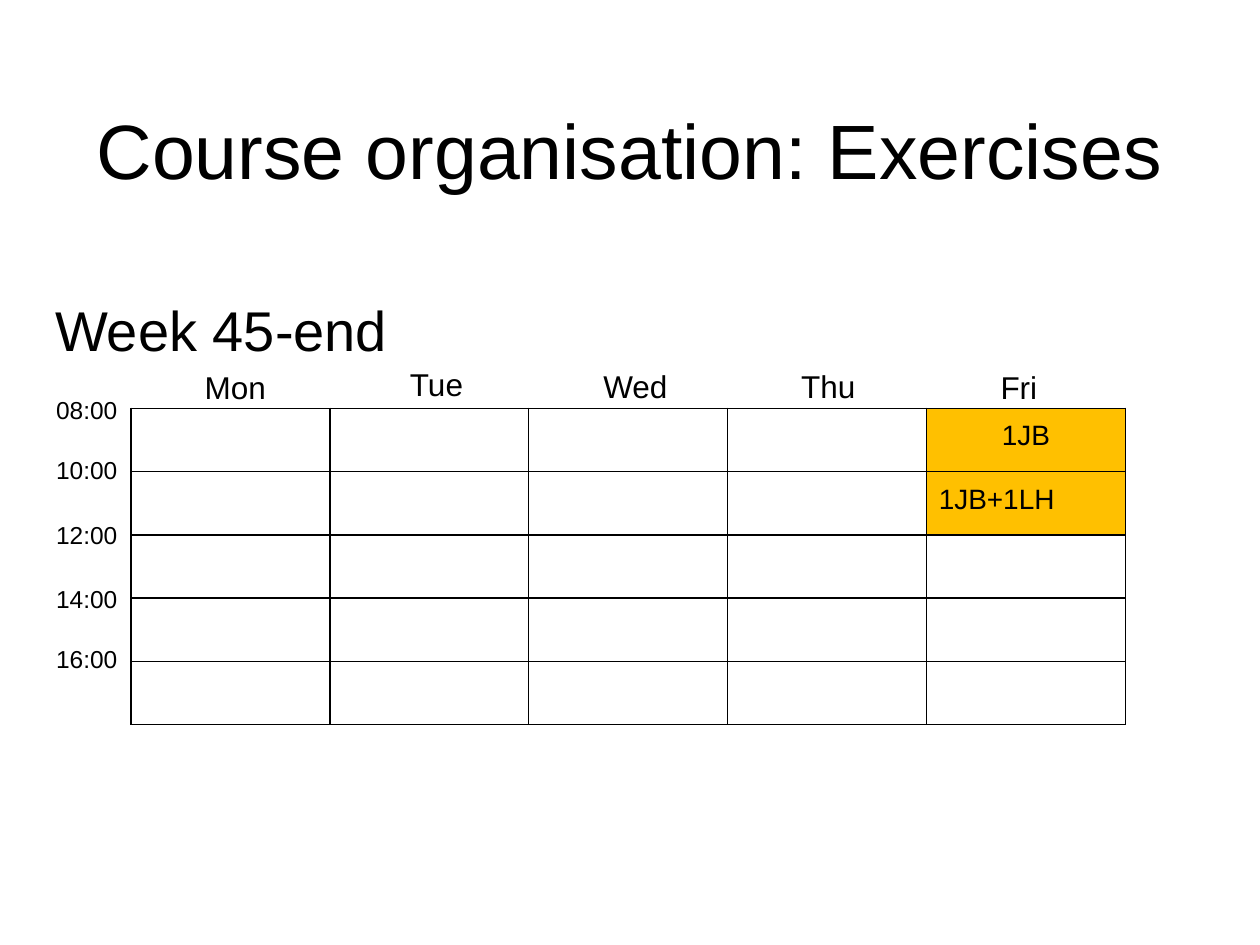
from dataclasses import dataclass

from lxml.etree import SubElement
from pptx import Presentation
from pptx.dml.color import RGBColor
from pptx.enum.text import MSO_ANCHOR, MSO_AUTO_SIZE, PP_ALIGN
from pptx.oxml.ns import qn
from pptx.util import Cm, Pt


@dataclass(frozen=True)
class Theme:
    font: str = "Arial"
    ink: RGBColor = RGBColor(0x00, 0x00, 0x00)
    booked: RGBColor = RGBColor(0xFF, 0xC0, 0x00)
    title: int = 44
    heading: int = 32
    day: int = 18
    slot: int = 16
    hour: int = 14
    border: float = 1
    inset: float = 0.25


THEME = Theme()

# Content: labels with their positions in cm
DAYS = [  # name, left, top, width
    ("Mon", 0.86, 7.16, 7.77),
    ("Tue", 4.14, 7.11, 9.32),
    ("Wed", 8.15, 7.14, 9.32),
    ("Thu", 12.04, 7.14, 9.32),
    ("Fri", 15.88, 7.16, 9.32),
]
HOURS = [  # start time, top
    ("08:00", 7.72),
    ("10:00", 8.92),
    ("12:00", 10.24),
    ("14:00", 11.53),
    ("16:00", 12.73),
]
BOOKINGS = {  # (row, column): text, alignment
    (0, 4): ("1JB", PP_ALIGN.CENTER),
    (1, 4): ("1JB+1LH", PP_ALIGN.LEFT),
}
LEFT_EDGE, LABEL_HEIGHT, HOUR_WIDTH = 0.86, 1.09, 1.78
CONTENT_WIDTH = 23.67
GRID_LEFT, GRID_TOP = 2.64, 8.23
COLUMN_WIDTH, ROW_HEIGHT = 4.01, 1.22


def write(frame, text, size, align):
    """Put one formatted run in the first paragraph."""
    paragraph = frame.paragraphs[0]
    paragraph.alignment = align
    run = paragraph.add_run()
    run.text = text
    run.font.name = THEME.font
    run.font.size = Pt(size)
    run.font.color.rgb = THEME.ink


def set_insets(holder, top=THEME.inset):
    holder.margin_left = holder.margin_right = Cm(THEME.inset)
    holder.margin_top, holder.margin_bottom = Cm(top), Cm(THEME.inset)


def format_frame(frame, top_inset=THEME.inset):
    frame.word_wrap = True
    frame.auto_size = MSO_AUTO_SIZE.NONE
    frame.vertical_anchor = MSO_ANCHOR.TOP
    set_insets(frame, top_inset)


def add_title(slide, text):
    title = slide.shapes.title
    title.left, title.top = Cm(LEFT_EDGE), Cm(1.65)
    title.width, title.height = Cm(CONTENT_WIDTH), Cm(2.13)
    format_frame(title.text_frame, top_inset=0.41)
    write(title.text_frame, text, THEME.title, PP_ALIGN.CENTER)


def add_label(slide, text, left, top, width, size, height=LABEL_HEIGHT,
              align=PP_ALIGN.CENTER, top_inset=THEME.inset):
    box = slide.shapes.add_textbox(Cm(left), Cm(top), Cm(width), Cm(height))
    format_frame(box.text_frame, top_inset)
    write(box.text_frame, text, size, align)


def add_borders(cell):
    """Rule all four sides; lines must precede the fill in the cell."""
    properties = cell._tc.get_or_add_tcPr()
    for position, side in enumerate(("lnL", "lnR", "lnT", "lnB")):
        line = SubElement(properties, qn(f"a:{side}"), w=str(Pt(THEME.border)))
        fill = SubElement(line, qn("a:solidFill"))
        SubElement(fill, qn("a:srgbClr"), val=str(THEME.ink))
        properties.insert(position, line)


def add_timetable(slide):
    table = slide.shapes.add_table(
        len(HOURS), len(DAYS), Cm(GRID_LEFT), Cm(GRID_TOP),
        Cm(COLUMN_WIDTH * len(DAYS)), Cm(ROW_HEIGHT * len(HOURS))).table
    table.first_row = table.horz_banding = False

    for row in range(len(HOURS)):
        for column in range(len(DAYS)):
            cell = table.cell(row, column)
            set_insets(cell)
            if (row, column) in BOOKINGS:
                text, align = BOOKINGS[row, column]
                cell.fill.solid()
                cell.fill.fore_color.rgb = THEME.booked
                write(cell.text_frame, text, THEME.slot, align)
            else:
                cell.fill.background()
            add_borders(cell)


def main():
    deck = Presentation()
    deck.slide_width, deck.slide_height = Cm(25.4), Cm(19.05)
    slide = deck.slides.add_slide(deck.slide_layouts[5])

    # Title and period
    add_title(slide, "Course organisation: Exercises")
    add_label(slide, "Week 45-end", LEFT_EDGE, 5.59, CONTENT_WIDTH,
              THEME.heading, height=9.5, align=PP_ALIGN.LEFT, top_inset=0.36)

    # Timetable with its day and hour labels
    add_timetable(slide)
    for day, left, top, width in DAYS:
        add_label(slide, day, left, top, width, THEME.day)
    for hour, top in HOURS:
        add_label(slide, hour, LEFT_EDGE, top, HOUR_WIDTH, THEME.hour)

    deck.save("out.pptx")


if __name__ == "__main__":
    main()
